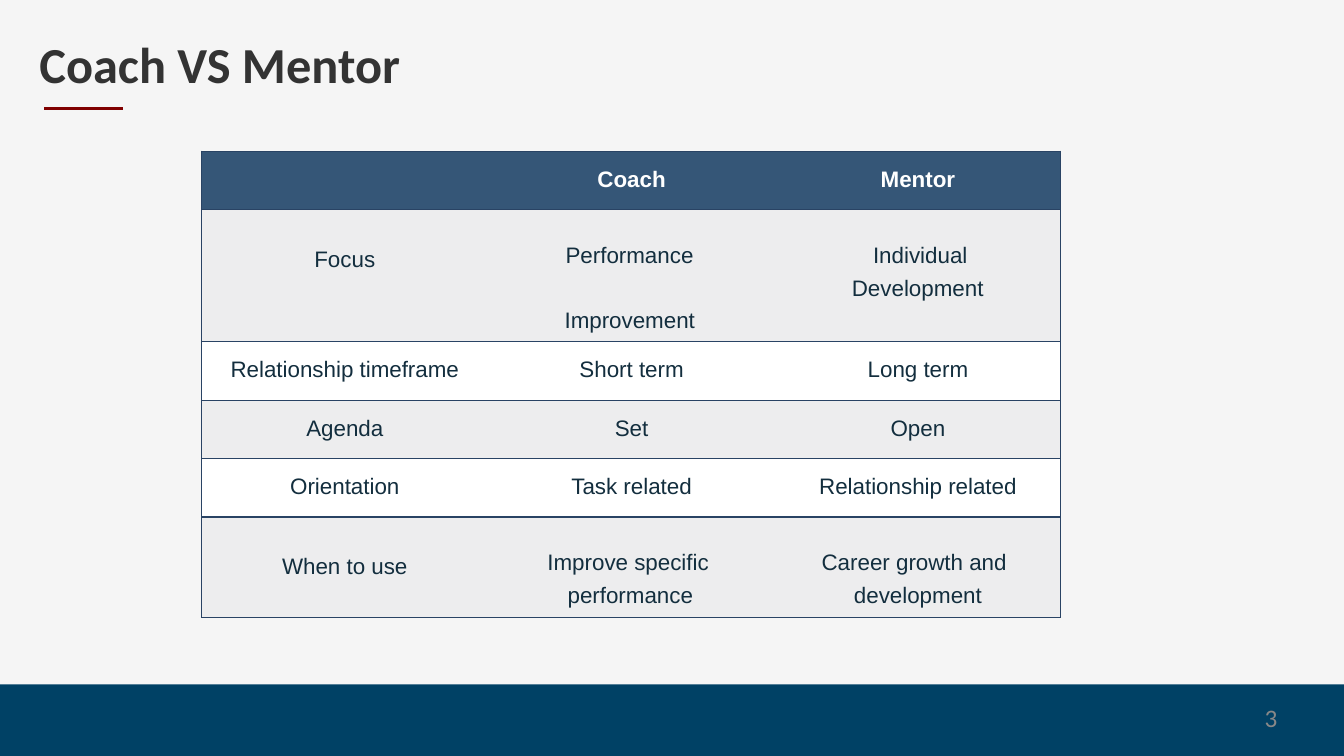
from dataclasses import dataclass

from lxml import etree
from pptx import Presentation
from pptx.dml.color import RGBColor
from pptx.enum.shapes import MSO_CONNECTOR, MSO_SHAPE
from pptx.enum.text import MSO_ANCHOR, PP_ALIGN
from pptx.oxml.ns import qn
from pptx.util import Inches, Pt

LEFT, CENTER, RIGHT = PP_ALIGN.LEFT, PP_ALIGN.CENTER, PP_ALIGN.RIGHT
TOP = MSO_ANCHOR.TOP
RECTANGLE = MSO_SHAPE.RECTANGLE
STRAIGHT = MSO_CONNECTOR.STRAIGHT


@dataclass(frozen=True)
class Theme:
    backdrop: str = "F5F5F5"
    footer: str = "004165"
    accent: str = "800000"
    title: str = "333333"
    page_number: str = "888888"
    header: str = "355677"
    header_text: str = "FFFFFF"
    body_text: str = "132E3E"
    border: str = "294364"
    bands: tuple = ("FFFFFF", "EDEDEE")
    heading_font: str = "Calibri"
    table_font: str = "Arial"
    title_size: float = 36
    table_size: float = 16
    number_size: float = 18
    line_pitch: float = 23.2


@dataclass(frozen=True)
class CellLayout:
    top: float = 0.16
    align: int = CENTER
    left: float = 0
    right: float = 0
    first: float = 0
    pitch: float = 0


class SlideBuilder:
    def __init__(self, page, theme):
        self.page = page
        self.theme = theme

    def span(self, para, text, font, size, color, bold=False):
        span = para.add_run()
        span.text = text
        span.font.name = font
        span.font.size = Pt(size)
        span.font.bold = bold
        span.font.color.rgb = RGBColor.from_string(color)

    def panel(self, left, top, width, height, color):
        box = self.page.shapes.add_shape(
            RECTANGLE, Inches(left), Inches(top), Inches(width), Inches(height))
        box.shadow.inherit = False
        box.fill.solid()
        box.fill.fore_color.rgb = RGBColor.from_string(color)
        box.line.fill.background()

    def rule(self, left, top, width, color, weight):
        line = self.page.shapes.add_connector(
            STRAIGHT, Inches(left), Inches(top), Inches(left + width), Inches(top))
        line.line.color.rgb = RGBColor.from_string(color)
        line.line.width = Pt(weight)
        etree.SubElement(line._element.spPr, qn("a:effectLst"))

    def label(self, place, text, size, color, bold=False, align=LEFT):
        box = self.page.shapes.add_textbox(*map(Inches, place))
        frame = box.text_frame
        frame.word_wrap = True
        frame.margin_left = frame.margin_top = frame.margin_right = frame.margin_bottom = 0
        para = frame.paragraphs[0]
        para.alignment = align
        self.span(para, text, self.theme.heading_font, size, color, bold)

    def borders(self, cell, visible):
        properties = cell._tc.get_or_add_tcPr()
        for position, side in enumerate("LRTB"):
            line = etree.Element(qn("a:ln" + side), w=str(Pt(1)))
            if side in visible:
                fill = etree.SubElement(line, qn("a:solidFill"))
                etree.SubElement(fill, qn("a:srgbClr"), val=self.theme.border)
            else:
                etree.SubElement(line, qn("a:noFill"))
            properties.insert(position, line)

    def cell(self, cell, lines, layout, fill, color, bold, visible):
        cell.fill.solid()
        cell.fill.fore_color.rgb = RGBColor.from_string(fill)
        self.borders(cell, visible)
        cell.vertical_anchor = TOP
        cell.margin_left = cell.margin_right = cell.margin_bottom = 0
        cell.margin_top = Inches(layout.top)
        frame = cell.text_frame
        for index, text in enumerate(lines):
            para = frame.add_paragraph() if index else frame.paragraphs[0]
            para.alignment = layout.align
            properties = para._p.get_or_add_pPr()
            properties.set("marL", str(Inches(layout.left)))
            properties.set("marR", str(Inches(layout.right)))
            properties.set("indent", str(0 if index else Inches(layout.first)))
            if layout.pitch:
                para.line_spacing = Pt(layout.pitch)
            if index:
                para.space_before = Pt(layout.pitch)
            self.span(para, text, self.theme.table_font, self.theme.table_size, color, bold)

    def table(self, left, top, widths, heights, rows, layouts):
        theme = self.theme
        table = self.page.shapes.add_table(
            len(rows), len(widths), Inches(left), Inches(top),
            Inches(sum(widths)), Inches(sum(heights))).table
        table.horz_banding = False
        for column, width in zip(table.columns, widths):
            column.width = Inches(width)
        for row, height in zip(table.rows, heights):
            row.height = Inches(height)
        edges = ("LTB", "TB", "RTB")
        for r, texts in enumerate(rows):
            head = r == 0
            fill = theme.header if head else theme.bands[r % 2]
            color = theme.header_text if head else theme.body_text
            for c, lines in enumerate(texts):
                self.cell(table.cell(r, c), lines, layouts[r][c], fill, color, head, edges[c])


def main():
    theme = Theme()
    deck = Presentation()
    deck.slide_width, deck.slide_height = Inches(13.33), Inches(7.5)
    slide = SlideBuilder(deck.slides.add_slide(deck.slide_layouts[6]), theme)

    # Backdrop, footer band and title
    slide.panel(0, 0, 13.33, 7.5, theme.backdrop)
    slide.panel(0, 6.79, 13.33, 0.71, theme.footer)
    slide.rule(0.44, 1.08, 0.78, theme.accent, 2.25)
    slide.label((0.39, 0.33, 12.55, 0.61), "Coach VS Mentor", theme.title_size, theme.title, True)

    # Comparison table: each cell is a list of paragraphs
    rows = [
        ([], ["Coach"], ["Mentor"]),
        (["Focus"], ["Performance", "Improvement"], ["Individual Development"]),
        (["Relationship timeframe"], ["Short term"], ["Long term"]),
        (["Agenda"], ["Set"], ["Open"]),
        (["Orientation"], ["Task related"], ["Relationship related"]),
        (["When to use"], ["Improve specific performance"], ["Career growth and development"]),
    ]
    single = (CellLayout(right=0.18), CellLayout(right=0.08), CellLayout(left=0.1))
    topic = CellLayout(top=0.37, right=0.18)

    def hanging(left, first):
        return CellLayout(0.26, LEFT, left, 0, first, theme.line_pitch)

    focus = (topic, hanging(0.58, 0.01), hanging(0.86, 0.21))
    usage = (topic, hanging(0.61, -0.2), hanging(0.88, -0.32))
    layouts = [single, focus, single, single, single, usage]
    heights = [0.58, 1.31, 0.58, 0.58, 0.58, 1]
    slide.table(2, 1.5, (3.02, 2.57, 2.93), heights, rows, layouts)

    # Page number
    slide.label((9.6, 6.97, 3.07, 0.38), "3", theme.number_size, theme.page_number, align=RIGHT)

    deck.save("out.pptx")


if __name__ == "__main__":
    main()
